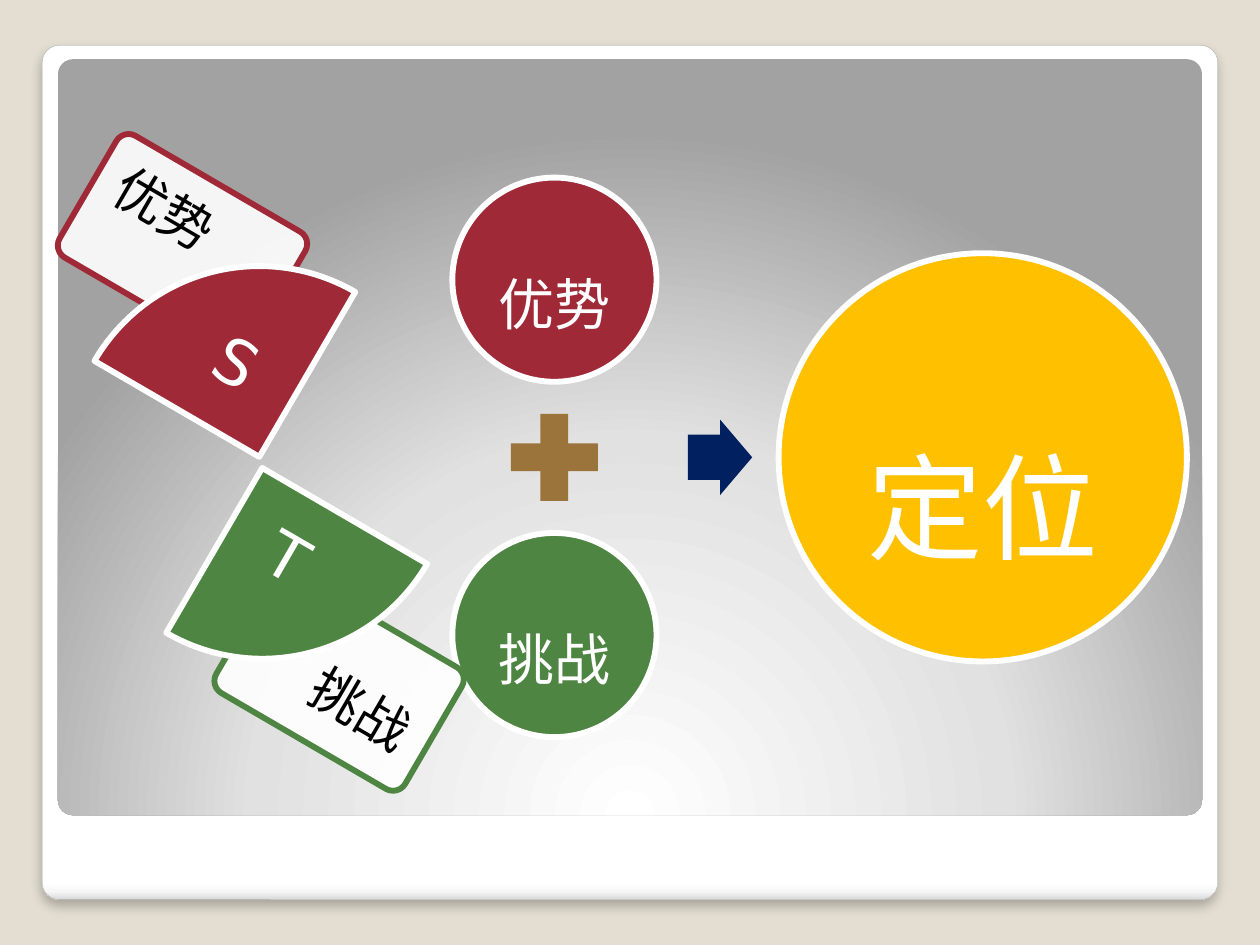
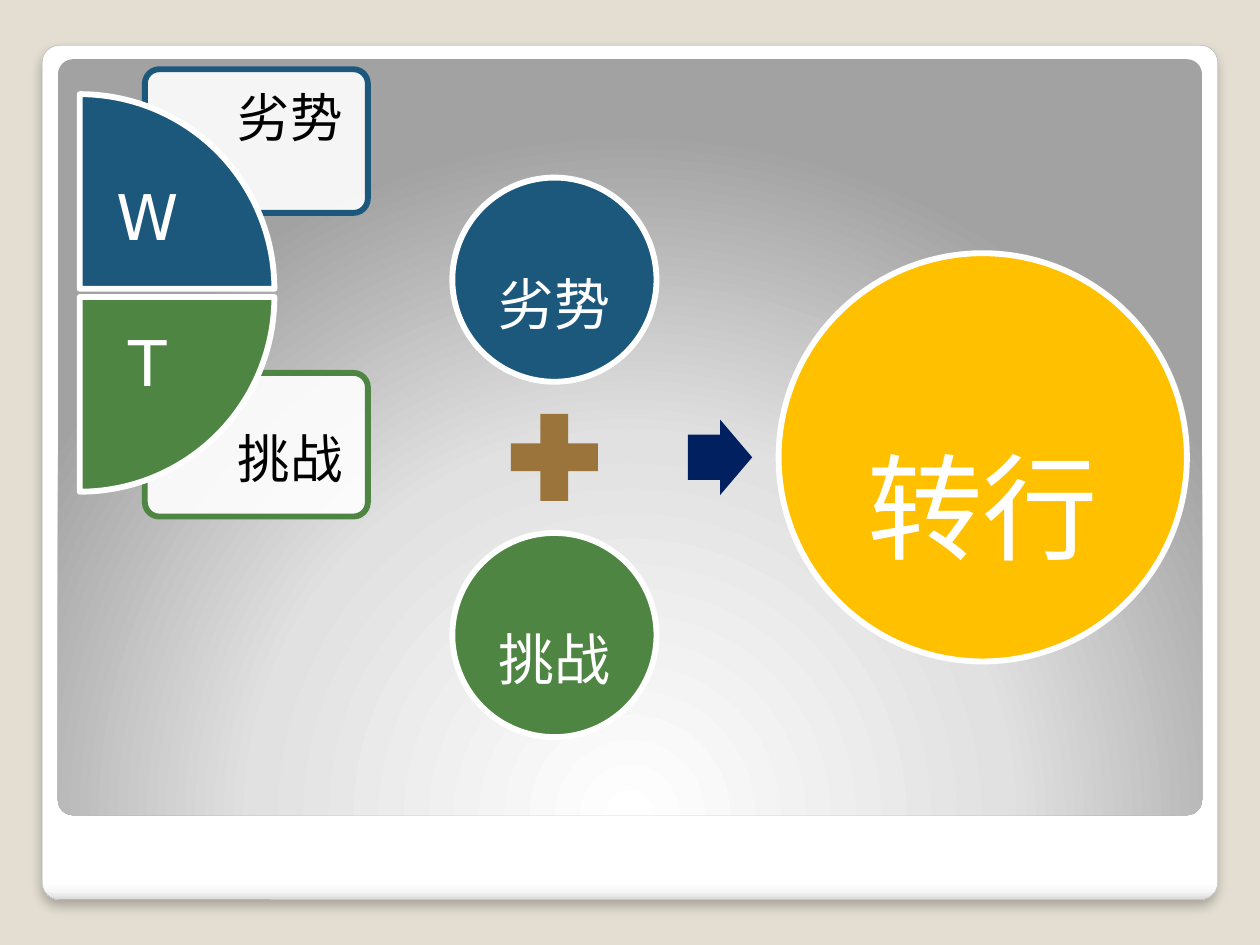
"""Build two slides that combine SWOT quadrants into a conclusion."""
from math import cos, radians, sin

from pptx import Presentation
from pptx.dml.color import RGBColor
from pptx.enum.shapes import MSO_SHAPE as Preset
from pptx.enum.text import MSO_ANCHOR as Anchor, PP_ALIGN as Align
from pptx.oxml import parse_xml
from pptx.oxml.ns import nsdecls
from pptx.util import Inches, Pt

SAND = RGBColor(0xE3, 0xDE, 0xD1)
WHITE = RGBColor(0xFF, 0xFF, 0xFF)
BLACK = RGBColor(0, 0, 0)
GREY = RGBColor(0xA4, 0xA4, 0xA4)
RED = RGBColor(0x9F, 0x29, 0x36)
GREEN = RGBColor(0x4E, 0x85, 0x42)
BLUE = RGBColor(0x1B, 0x58, 0x7C)
BROWN = RGBColor(0x9A, 0x74, 0x3A)
NAVY = RGBColor(0, 0x20, 0x60)
GOLD = RGBColor(0xFF, 0xC0, 0)
FONT = "DejaVu Sans"
OUTLINE = 3.35

FRAME_STOPS = [(0, WHITE), (98, WHITE), (99, RGBColor(0xF7, 0xF7, 0xF7)), (100, RGBColor(0xDA, 0xDA, 0xDA))]
FRAME_SHADE = '<a:lin ang="5400000" scaled="0"/>'
PANEL_STOPS = [(0, WHITE), (55, RGBColor(0xE1, 0xE1, 0xE1)), (100, RGBColor(0xA2, 0xA2, 0xA2))]
PANEL_SHADE = '<a:path path="circle"><a:fillToRect l="50000" t="175000" r="50000" b="-75000"/></a:path>'

presentation = Presentation()
presentation.slide_width, presentation.slide_height = Inches(10), Inches(7.5)
CELL = presentation.slide_width // 100


def add_shape(slide, preset, center, size, fill=None, line=None, width=OUTLINE, rotation=0):
    """Add a preset shape by its centre and size in grid cells."""
    (x, y), (w, h) = center, size
    box = [round(CELL * value) for value in (x - w / 2, y - h / 2, w, h)]
    shape = slide.shapes.add_shape(preset, *box)
    shape.rotation = rotation
    shape.shadow.inherit = False
    if fill is None:
        shape.fill.background()
    else:
        shape.fill.solid()
        shape.fill.fore_color.rgb = fill
    if line is None:
        shape.line.fill.background()
    else:
        shape.line.color.rgb = line
        shape.line.width = Pt(width)
    return shape


def write(shape, text, size, color, spacing, anchor=Anchor.MIDDLE, inset=None):
    """Write one centred paragraph into a shape."""
    frame = shape.text_frame
    frame.word_wrap = True
    frame.vertical_anchor = anchor
    if inset is not None:
        frame.margin_left = frame.margin_right = frame.margin_top = frame.margin_bottom = Inches(inset)
    frame.text = text
    paragraph = frame.paragraphs[0]
    paragraph.alignment = Align.CENTER
    paragraph.line_spacing = spacing
    font = paragraph.runs[0].font
    font.name, font.size, font.color.rgb = FONT, Pt(size), color


background = presentation.slide_master.background.fill
background.solid()
background.fore_color.rgb = SAND

WEDGE_TURN = {(-1, -1): 0, (1, -1): 90, (1, 1): 180}
SLIDES = [
    {"result": "定位", "hub": (20.7, 36.7), "tilt": 30.2, "scale": 0.98,
     "factors": [("优势", "S", RED, (-1, -1)), ("挑战", "T", GREEN, (1, 1))]},
    {"result": "转行", "hub": (6, 23.25), "tilt": 0, "scale": 1,
     "factors": [("劣势", "W", BLUE, (1, -1)), ("挑战", "T", GREEN, (1, 1))]},
]

for content in SLIDES:
    slide = presentation.slides.add_slide(presentation.slide_layouts[6])

    frame = add_shape(slide, Preset.ROUNDED_RECTANGLE, (50, 37.5), (93.3, 67.8), WHITE, GREY, 0.16)
    panel = add_shape(slide, Preset.ROUNDED_RECTANGLE, (50, 34.7), (90.8, 60), WHITE)
    for shape, stops, shade in ((frame, FRAME_STOPS, FRAME_SHADE), (panel, PANEL_STOPS, PANEL_SHADE)):
        shape.adjustments[0] = 0.02
        stop_xml = "".join(
            f'<a:gs pos="{position * 1000}"><a:srgbClr val="{color}"/></a:gs>' for position, color in stops)
        gradient = parse_xml(
            f'<a:gradFill {nsdecls("a")} rotWithShape="1"><a:gsLst>{stop_xml}</a:gsLst>{shade}</a:gradFill>')
        properties = shape._element.spPr
        properties.replace(properties.find(".//{*}solidFill"), gradient)
    frame._element.spPr.find("{*}effectLst").append(parse_xml(
        f'<a:outerShdw {nsdecls("a")} blurRad="{Pt(6)}" dist="{Pt(4)}" dir="5400000" algn="t" rotWithShape="0">'
        '<a:srgbClr val="000000"><a:alpha val="25000"/></a:srgbClr></a:outerShdw>'))

    middle = 36.3
    for word, letter, color, (across, down) in content["factors"]:
        circle = add_shape(slide, Preset.OVAL, (44, middle + 14.1 * down), (16.2, 16.2), color, WHITE)
        write(circle, word, 32, WHITE, 1.7)
    add_shape(slide, Preset.MATH_PLUS, (44, middle), (9.4, 9.4), BROWN)
    arrow = add_shape(slide, Preset.RIGHT_ARROW, (57.15, middle), (5.1, 6), NAVY)
    arrow.adjustments[0] = 0.6
    result = add_shape(slide, Preset.OVAL, (78, middle), (32.4, 32.4), GOLD, WHITE)
    write(result, content["result"], 66, WHITE, 1.7)

    tilt, scale = content["tilt"], content["scale"]
    cosine, sine = cos(radians(tilt)), sin(radians(tilt))
    for word, letter, color, (across, down) in content["factors"]:
        centers = []
        for reach_x, reach_y in ((14.35, 12.05), (17.05, 13.5), (8.05, 8.05), (5.75, 5.8)):
            x, y = across * reach_x * scale, down * reach_y * scale
            centers.append((content["hub"][0] + x * cosine - y * sine,
                            content["hub"][1] + x * sine + y * cosine))
        card_center, label_center, wedge_center, letter_center = centers

        card = add_shape(slide, Preset.ROUNDED_RECTANGLE, card_center, (17.7 * scale, 11.4 * scale),
                         WHITE, color, rotation=tilt)
        card.adjustments[0] = 0.1
        card._element.spPr.find("{*}solidFill")[0].append(parse_xml(f'<a:alpha {nsdecls("a")} val="90000"/>'))
        label = add_shape(slide, Preset.RECTANGLE, label_center, (11.9, 8 * scale), rotation=tilt)
        write(label, word, 30, BLACK, 0.9, Anchor.TOP, 0.16)
        add_shape(slide, Preset.PIE_WEDGE, wedge_center, (15.45 * scale, 15.45 * scale), color, WHITE,
                  rotation=WEDGE_TURN[across, down] + tilt)
        initial = add_shape(slide, Preset.RECTANGLE, letter_center, (11 * scale, 10.9 * scale), rotation=tilt)
        write(initial, letter, 36, WHITE, 0.9, inset=0.11)

presentation.save("out.pptx")
